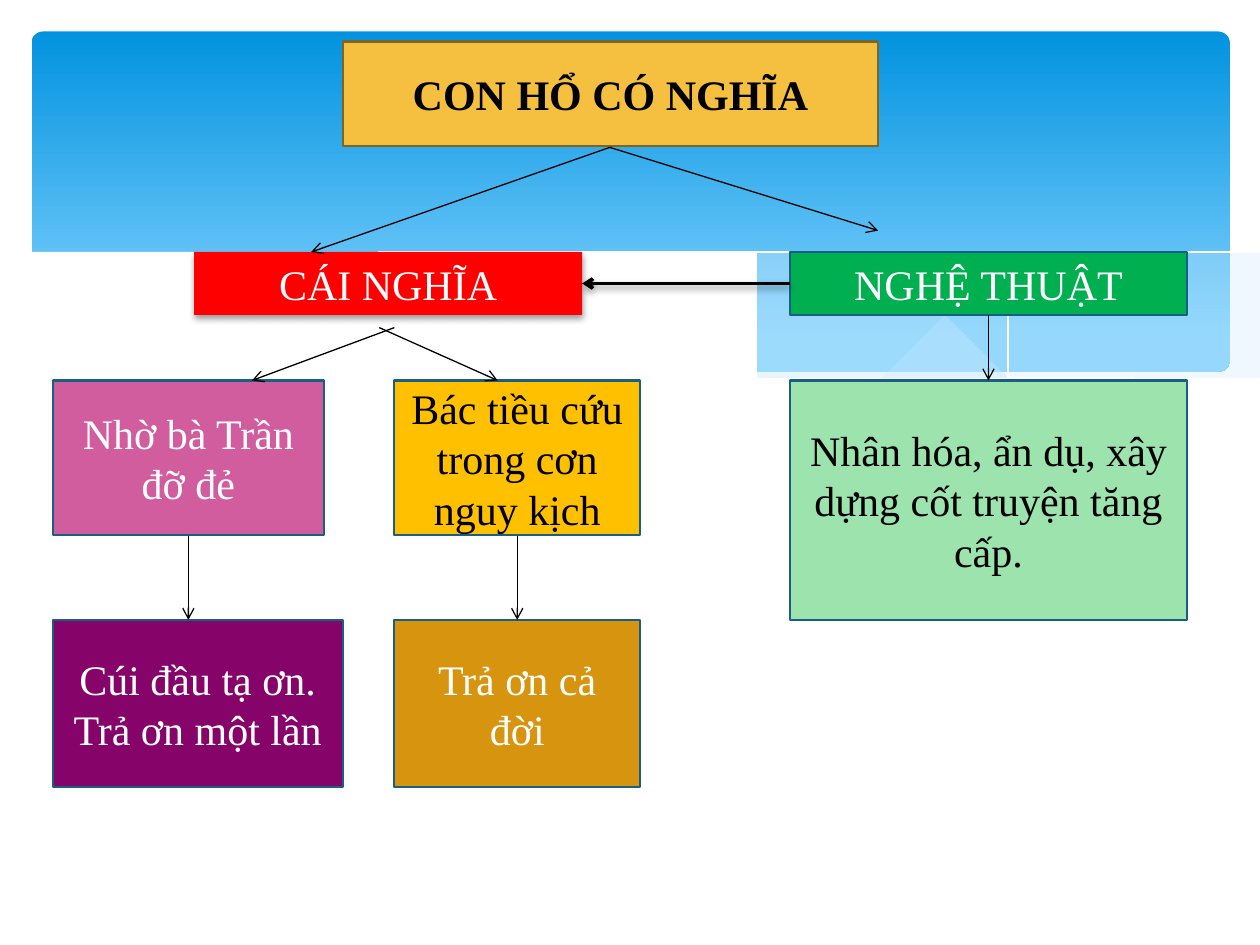
"""Build a concept map of the story over a blue wave background."""
from lxml import etree
from pptx import Presentation
from pptx import util as u
from pptx.dml.color import RGBColor
from pptx.enum import shapes, text
from pptx.oxml import ns

BLACK, WHITE = RGBColor(0, 0, 0), RGBColor(255, 255, 255)
SKY, LIGHT_SKY = RGBColor(0x02, 0x93, 0xE0), RGBColor(0x83, 0xD3, 0xFE)
MIST = RGBColor(0xC6, 0xE7, 0xFC)
GOLD, BROWN = RGBColor(0xF5, 0xC0, 0x40), RGBColor(0x80, 0x64, 0x21)
RED, GREEN = RGBColor(0xFF, 0, 0), RGBColor(0, 0xB0, 0x50)
PINK, AMBER = RGBColor(0xD1, 0x5D, 0x9F), RGBColor(0xFF, 0xC0, 0)
PURPLE, OCHRE = RGBColor(0x86, 0x04, 0x6A), RGBColor(0xD7, 0x94, 0x0F)
MINT, NAVY = RGBColor(0x9D, 0xE3, 0xAE), RGBColor(0x19, 0x5F, 0x84)

BOXES = {
    "title": ((2.72, 0.33, 4.25, 0.83), "CON HỔ CÓ NGHĨA", GOLD, BLACK, BROWN),
    "meaning": ((1.54, 2, 3.08, 0.5), "CÁI NGHĨA", RED, WHITE, None),
    "art": ((6.27, 2, 3.15, 0.5), "NGHỆ THUẬT", GREEN, WHITE, NAVY),
    "midwife": ((0.42, 3.02, 2.15, 1.23), "Nhờ bà Trần đỡ đẻ", PINK, WHITE, NAVY),
    "woodcutter": ((3.13, 3.02, 1.95, 1.23), "Bác tiều cứu trong cơn nguy kịch",
                   AMBER, BLACK, NAVY),
    "thanks once": ((0.42, 4.92, 2.3, 1.33), "Cúi đầu tạ ơn.\nTrả ơn một lần",
                    PURPLE, WHITE, NAVY),
    "thanks for life": ((3.13, 4.92, 1.95, 1.33), "Trả ơn cả đời", OCHRE, WHITE, NAVY),
    "devices": ((6.27, 3.02, 3.15, 1.9), "Nhân hóa, ẩn dụ, xây dựng cốt truyện tăng cấp.",
                MINT, BLACK, NAVY),
}
DOWN_LINKS = [("midwife", "thanks once"), ("woodcutter", "thanks for life"),
              ("art", "devices")]
BRANCHES = [((4.84, 1.17), (2.47, 2)), ((4.84, 1.17), (6.97, 1.83)),
            ((3.13, 2.6), (2, 3.02)), ((3.01, 2.6), (3.95, 3.02))]

WAVES = [
    ([[(9.76, 2), (9.35, 2.07), (8.61, 2.23), (7.53, 2.48), (6.61, 2.65)],
      [(6.61, 2.65), (7.32, 2.74), (8.14, 2.78), (8.89, 2.72), (9.42, 2.59), (9.76, 2.47)]],
     MIST, 29),
    ([[(8.93, 2.73), (8.07, 2.6), (7.06, 2.4), (5.98, 2.14), (5.14, 1.98), (4.42, 1.89),
       (3.61, 1.85), (2.86, 1.91)],
      [(2.86, 1.91), (3.62, 2.03), (4.49, 2.22), (5.66, 2.48), (6.65, 2.66), (7.48, 2.76),
       (8.18, 2.78), (8.93, 2.73)]], MIST, 40),
    ([[(3.09, 1.95), (3.53, 1.89), (4.16, 1.87), (4.89, 1.9), (5.82, 2), (6.95, 2.19),
       (7.95, 2.41), (9.07, 2.72)]], None, 100),
    ([[(6.13, 2.57), (6.95, 2.35), (7.76, 2.16), (8.66, 1.99), (9.24, 1.9), (9.75, 1.85)]],
     None, 100),
    ([[(0.23, 2.13), (0.59, 1.99), (1.06, 1.89), (1.77, 1.84), (2.5, 1.86), (3.4, 1.97),
       (4.47, 2.2), (5.55, 2.45), (6.68, 2.65), (7.44, 2.74), (8.09, 2.77), (8.75, 2.73),
       (9.3, 2.62), (9.77, 2.46)], [(9.77, 3.29), (0.23, 3.29)]], WHITE, 100),
]


def smooth(points, steps=6):
    """Return a spline through the points."""
    if len(points) < 3:
        return points
    padded = [points[0], *points, points[-1]]
    curve = [points[0]]
    for a, b, c, d in zip(padded, padded[1:], padded[2:], padded[3:]):
        for step in range(1, steps + 1):
            t = step / steps
            curve.append(tuple(
                (2 * q + (r - p) * t + (2 * p - 5 * q + 4 * r - s) * t ** 2
                 + (3 * q - p - 3 * r + s) * t ** 3) / 2
                for p, q, r, s in zip(a, b, c, d)))
    return curve


def child(parent, tag, **attributes):
    """Add a drawing element under the parent."""
    values = {key: str(value) for key, value in attributes.items()}
    return etree.SubElement(parent, ns.qn(tag), values)


def add_shadow(effects):
    """Put a soft drop shadow in an effect list."""
    shadow = child(effects, "a:outerShdw", blurRad=u.Pt(4), dist=u.Pt(2),
                   dir=5400000, rotWithShape=0)
    child(child(shadow, "a:srgbClr", val="000000"), "a:alpha", val=38000)


def add_wave(slide, edges, color, opacity):
    """Draw a filled wave, or a white hairline when there is no colour."""
    points = [point for edge in edges for point in smooth(edge)]
    builder = slide.shapes.build_freeform(*points[0], scale=u.Inches(1))
    builder.add_line_segments(points[1:], close=color is not None)
    wave = builder.convert_to_shape()
    wave.shadow.inherit = False
    if color is None:
        wave.fill.background()
        wave.line.color.rgb = WHITE
        wave.line.width = u.Pt(0)
        return
    wave.fill.solid()
    wave.fill.fore_color.rgb = color
    wave.line.fill.background()
    if opacity < 100:
        tint = wave._element.spPr.find(".//" + ns.qn("a:srgbClr"))
        child(tint, "a:alpha", val=opacity * 1000)


def add_background(slide):
    """Draw the sky panel and its waves."""
    sky = slide.shapes.add_shape(shapes.MSO_SHAPE.ROUNDED_RECTANGLE,
                                 *map(u.Inches, (0.25, 0.25, 9.51, 2.7)))
    sky.adjustments[0] = 0.034
    sky.shadow.inherit = False
    sky.line.fill.background()
    sky.fill.gradient()
    sky.fill.gradient_angle = 270
    for stop, position, color in zip(sky.fill.gradient_stops, (0, 0.9), (SKY, LIGHT_SKY)):
        stop.position = position
        stop.color.rgb = color
    for wave in WAVES:
        add_wave(slide, *wave)


def format_box(shape, place, words, fill, ink, outline):
    """Place, colour and letter one box."""
    for name, value in zip(("left", "top", "width", "height"), place):
        setattr(shape, name, u.Inches(value))
    shape.fill.solid()
    shape.fill.fore_color.rgb = fill
    shape.shadow.inherit = False
    if outline is None:
        shape.line.fill.background()
        add_shadow(shape._element.spPr.find(ns.qn("a:effectLst")))
    else:
        shape.line.color.rgb = outline
        shape.line.width = u.Pt(1.25)
    frame = shape.text_frame
    frame.text = words
    frame.word_wrap = True
    frame.auto_size = text.MSO_AUTO_SIZE.NONE
    frame.vertical_anchor = text.MSO_ANCHOR.MIDDLE
    for paragraph in frame.paragraphs:
        paragraph.alignment = text.PP_ALIGN.CENTER
        font = paragraph.runs[0].font
        font.color.rgb = ink
        styles = {"name": "Times New Roman", "size": u.Pt(24), "bold": shape.is_placeholder}
        for name, value in styles.items():
            setattr(font, name, value)


def add_arrow(slide, start, end, width=0.75, shadow=False):
    """Draw an open-headed arrow."""
    arrow = slide.shapes.add_connector(shapes.MSO_CONNECTOR.STRAIGHT,
                                       *map(u.Inches, (*start, *end)))
    arrow.line.color.rgb = BLACK
    arrow.line.width = u.Pt(width)
    properties = arrow._element.spPr
    child(properties.find(ns.qn("a:ln")), "a:tailEnd", type="arrow")
    effects = child(properties, "a:effectLst")
    if shadow:
        add_shadow(effects)


def main():
    """Assemble and save the slide."""
    presentation = Presentation()
    presentation.slide_width, presentation.slide_height = u.Inches(10), u.Inches(7.5)
    slide = presentation.slides.add_slide(presentation.slide_layouts[5])
    title = slide.shapes.title
    add_background(slide)
    slide.shapes._spTree.append(title._element)
    for name, box in BOXES.items():
        shape = title if name == "title" else slide.shapes.add_shape(
            shapes.MSO_SHAPE.RECTANGLE, 0, 0, 0, 0)
        format_box(shape, *box)
    for start, end in BRANCHES:
        add_arrow(slide, start, end)
    for upper, lower in DOWN_LINKS:
        left, top, width, height = BOXES[upper][0]
        center = left + width / 2
        add_arrow(slide, (center, top + height), (center, BOXES[lower][0][1]))
    add_arrow(slide, (6.27, 2.25), (4.62, 2.25), width=2, shadow=True)
    presentation.save("out.pptx")


if __name__ == "__main__":
    main()
